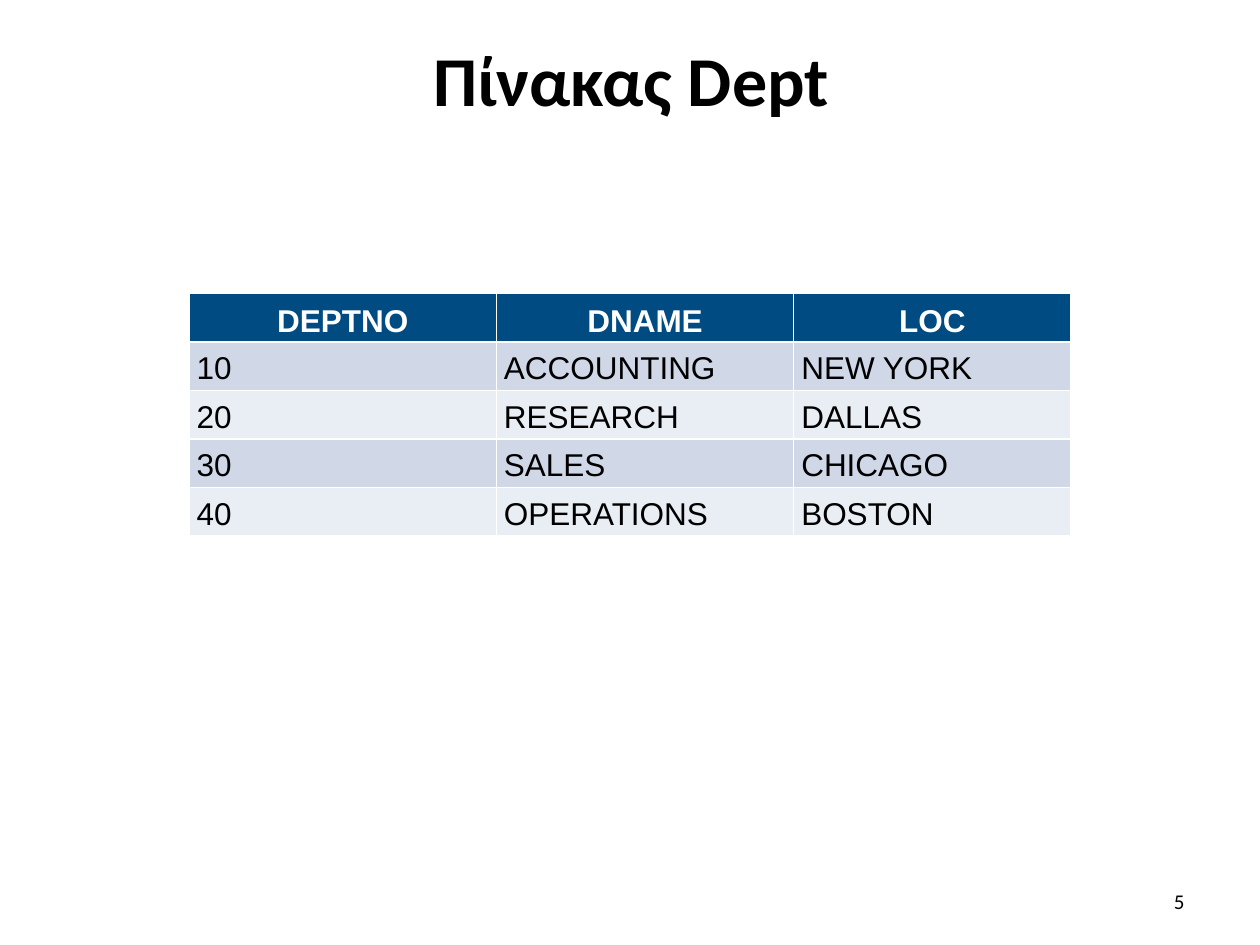
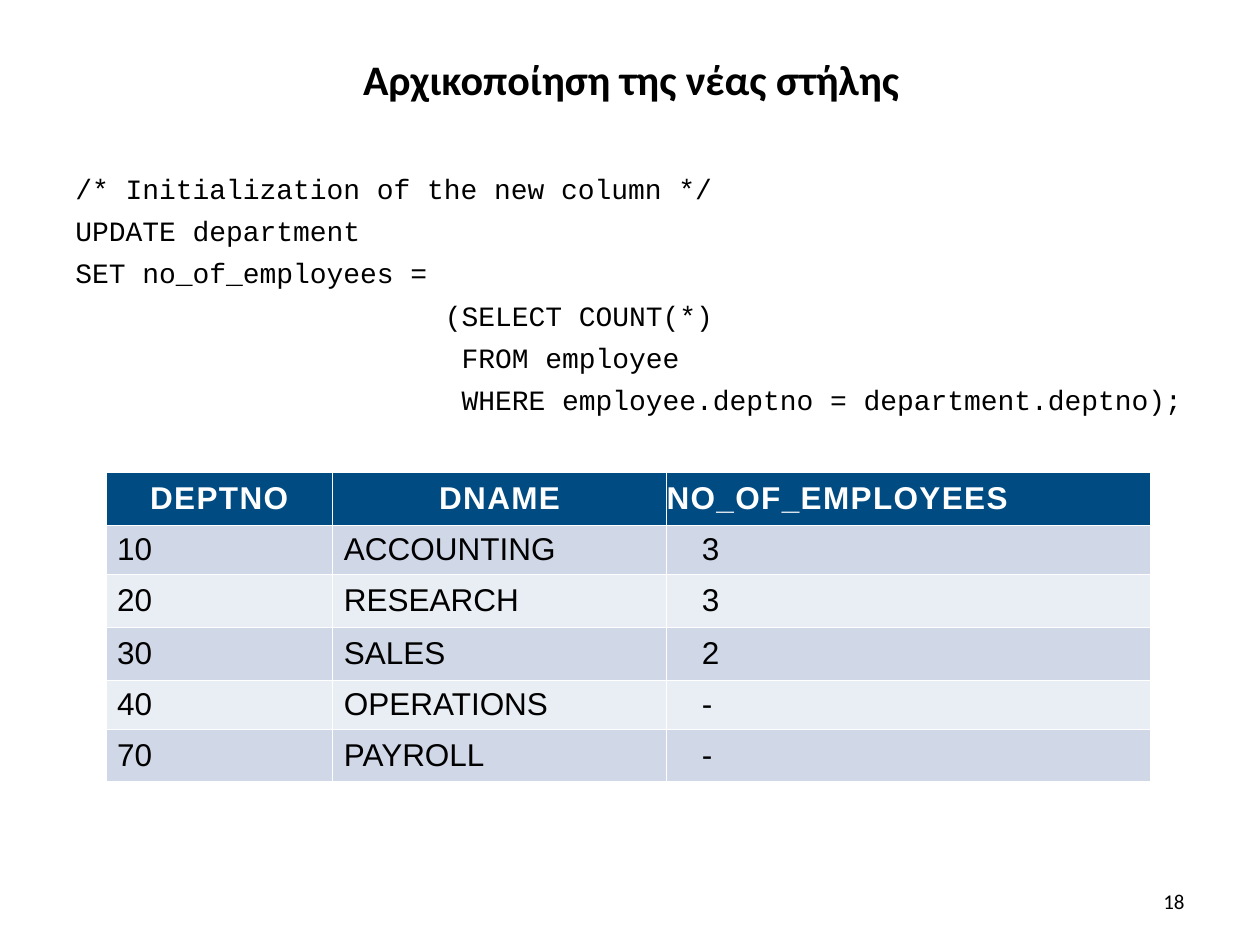
from pptx import Presentation
from pptx.dml.color import RGBColor
from pptx.enum.text import MSO_ANCHOR, PP_ALIGN
from pptx.util import Inches, Pt

CENTER, LEFT, RIGHT = PP_ALIGN.CENTER, PP_ALIGN.LEFT, PP_ALIGN.RIGHT
MIDDLE, BOTTOM = MSO_ANCHOR.MIDDLE, MSO_ANCHOR.BOTTOM

BLACK = RGBColor(0x00, 0x00, 0x00)
WHITE = RGBColor(0xFF, 0xFF, 0xFF)
HEADER_BLUE = RGBColor(0x00, 0x4B, 0x82)
BANDS = (RGBColor(0xD0, 0xD8, 0xE8), RGBColor(0xE9, 0xED, 0xF4))

TITLE_FONT, TABLE_FONT, CODE_FONT = "Calibri", "Arial", "Courier New"
TITLE_ONLY_LAYOUT = 5
CODE_CHARACTER_WIDTH = 0.1333  # one 16 pt Courier New character, in inches


class Deck:
    """Holds the shared style and the current slide."""

    def __init__(self):
        self.presentation = Presentation()
        self.presentation.slide_width = Inches(10)
        self.presentation.slide_height = Inches(7.5)
        self.slide = None

    def style(self, paragraph, font, size, color=BLACK, bold=False, align=LEFT):
        paragraph.alignment = align
        for run in paragraph.runs:
            run.font.name = font
            run.font.size = Pt(size)
            run.font.bold = bold
            run.font.color.rgb = color

    def add_slide(self, title, title_size, number):
        layout = self.presentation.slide_layouts[TITLE_ONLY_LAYOUT]
        self.slide = self.presentation.slides.add_slide(layout)
        shape = self.slide.shapes.title
        shape.left, shape.top = Inches(0.51), Inches(0.13)
        shape.width, shape.height = Inches(9), Inches(0.99)
        frame = shape.text_frame
        frame.text = title
        frame.vertical_anchor = MIDDLE
        frame.margin_left = frame.margin_right = 0
        frame.margin_top = frame.margin_bottom = 0
        self.style(frame.paragraphs[0], TITLE_FONT, title_size, bold=True, align=CENTER)
        self.add_number(number)

    def add_text_box(self, left, top, width, height):
        shape = self.slide.shapes.add_textbox(
            Inches(left), Inches(top), Inches(width), Inches(height))
        shape.text_frame.word_wrap = True
        return shape.text_frame

    def add_number(self, number):
        frame = self.add_text_box(7.17, 6.95, 2.33, 0.4)
        frame.text = str(number)
        frame.vertical_anchor = MIDDLE
        self.style(frame.paragraphs[0], TITLE_FONT, 12, align=RIGHT)

    def add_code(self, lines):
        """Each line is a pair: indent in characters, text."""
        frame = self.add_text_box(0.5, 1.31, 9.5, 2.2)
        frame.text = "\n".join(text for _, text in lines)
        for paragraph, (indent, _) in zip(frame.paragraphs, lines):
            paragraph.space_before = Pt(5)
            properties = paragraph._p.get_or_add_pPr()
            properties.set("marL", str(Inches(indent * CODE_CHARACTER_WIDTH)))
            self.style(paragraph, CODE_FONT, 16)

    def add_table(self, left, top, columns, heights, rows, margins,
                  header_anchor=MIDDLE, line_spacing=1.0):
        frame = self.slide.shapes.add_table(
            len(rows), len(columns), Inches(left), Inches(top),
            Inches(sum(columns)), Inches(sum(heights)))
        table = frame.table
        for column, width in zip(table.columns, columns):
            column.width = Inches(width)
        for row, height in zip(table.rows, heights):
            row.height = Inches(height)
        for row_index, values in enumerate(rows):
            header = row_index == 0
            for column_index, value in enumerate(values):
                cell = table.cell(row_index, column_index)
                cell.text = value
                cell.fill.solid()
                cell.fill.fore_color.rgb = (
                    HEADER_BLUE if header else BANDS[(row_index - 1) % 2])
                cell.vertical_anchor = header_anchor if header else MIDDLE
                cell.margin_left = cell.margin_right = Inches(margins[0])
                cell.margin_top = cell.margin_bottom = Inches(margins[1])
                paragraph = cell.text_frame.paragraphs[0]
                paragraph.line_spacing = line_spacing
                self.style(paragraph, TABLE_FONT, 18, WHITE if header else BLACK,
                           header, CENTER if header else LEFT)
        return table


def build_department_slide(deck):
    deck.add_slide("Πίνακας Dept", 40, 5)
    rows = [
        ("DEPTNO", "DNAME", "LOC"),
        ("10", "ACCOUNTING", "NEW YORK"),
        ("20", "RESEARCH", "DALLAS"),
        ("30", "SALES", "CHICAGO"),
        ("40", "OPERATIONS", "BOSTON"),
    ]
    deck.add_table(1.5, 2.33, (2.44, 2.36, 2.2), [0.36] * len(rows), rows,
                   margins=(0.06, 0.02), header_anchor=BOTTOM, line_spacing=1.15)


def build_new_column_slide(deck):
    deck.add_slide("Αρχικοποίηση της νέας στήλης", 24, 18)
    deck.add_code([
        (0, "/* Initialization of the new column */"),
        (0, "UPDATE department"),
        (0, "SET no_of_employees ="),
        (22, "(SELECT COUNT(*)"),
        (23, "FROM employee"),
        (23, "WHERE employee.deptno = department.deptno);"),
    ])
    rows = [
        ("DEPTNO", "DNAME", "NO_OF_EMPLOYEES"),
        ("10", "ACCOUNTING", "3"),
        ("20", "RESEARCH", "3"),
        ("30", "SALES", "2"),
        ("40", "OPERATIONS", "-"),
        ("70", "PAYROLL", "-"),
    ]
    table = deck.add_table(0.84, 3.75, (1.8, 2.65, 3.84),
                           (0.42, 0.39, 0.42, 0.42, 0.39, 0.42), rows,
                           margins=(0.09, 0.03))

    # Spaced header letters
    for cell in table.rows[0].cells:
        run = cell.text_frame.paragraphs[0].runs[0]
        run._r.get_or_add_rPr().set("spc", "80")

    # Employee counts: header flush left, values indented
    for row_index in range(len(rows)):
        cell = table.cell(row_index, 2)
        cell.margin_left = Inches(0.28 if row_index else 0)
        cell.margin_right = cell.margin_top = cell.margin_bottom = 0
        cell.text_frame.paragraphs[0].alignment = LEFT


def main():
    deck = Deck()
    build_department_slide(deck)
    build_new_column_slide(deck)
    deck.presentation.save("out.pptx")


if __name__ == "__main__":
    main()
